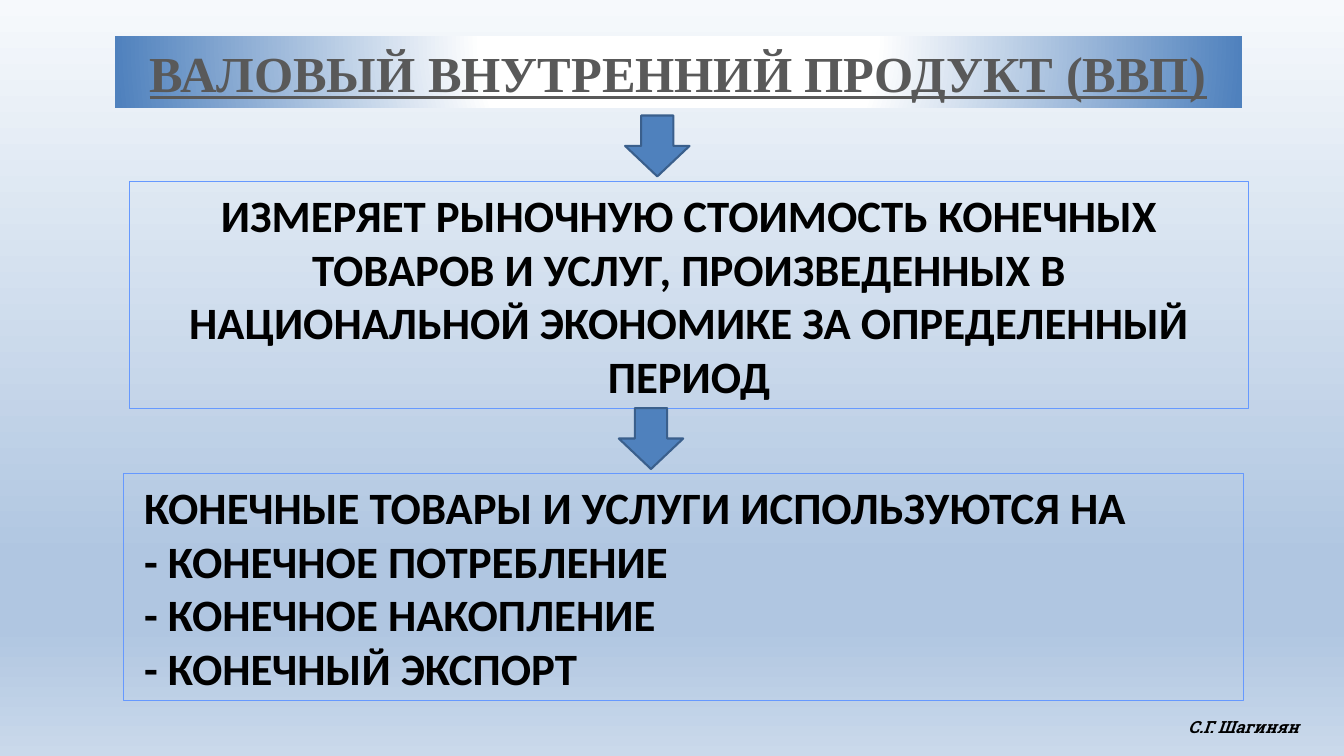
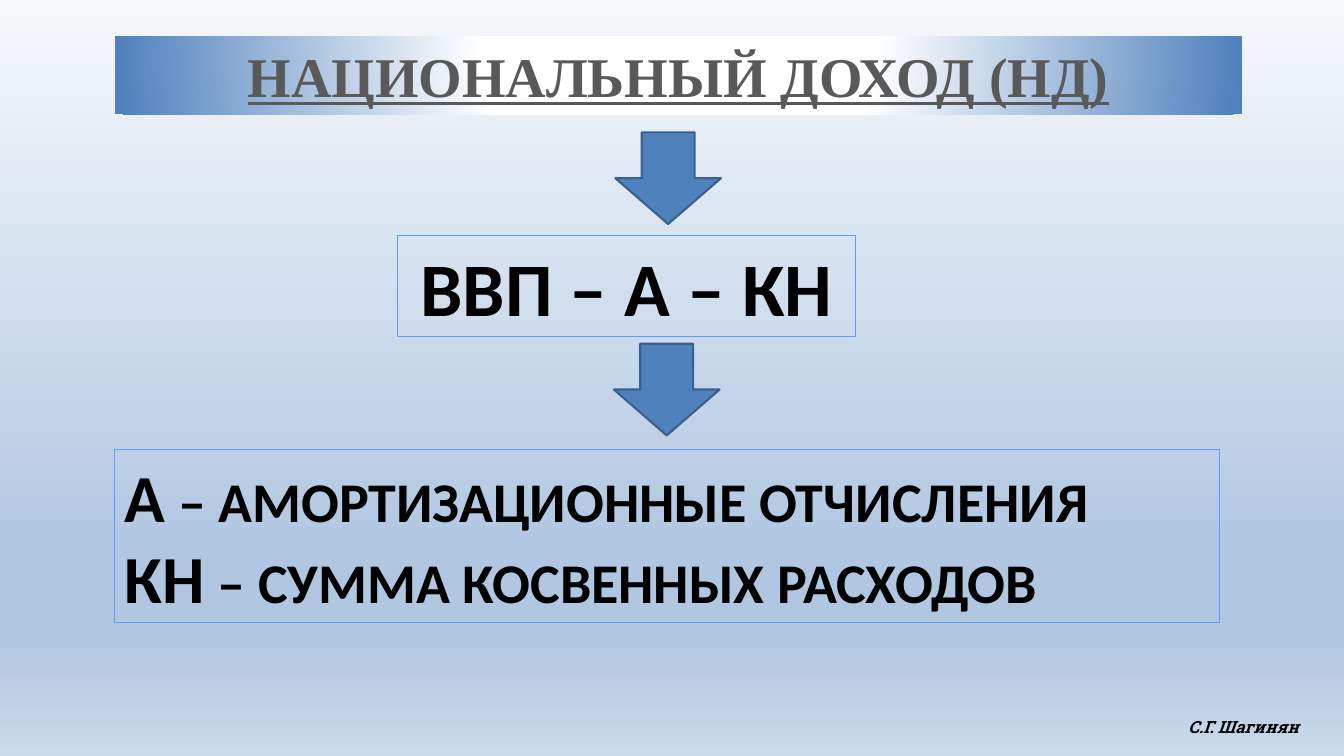
from lxml import etree
from pptx import Presentation
from pptx.dml.color import RGBColor
from pptx.enum import shapes, text
from pptx.oxml import ns
from pptx.util import Pt

BLUE, ARROW_EDGE, BOX_EDGE = "4F81BD", "3A5F8C", "6699FF"
BLACK, GREY = "000000", "595959"
BACKGROUND_STOPS = [(0, "F6F9FC"), (74, "B0C6E1"), (83, "B0C6E1"), (100, "CAD9EB")]
BACKGROUND_DIRECTION = '<a:lin ang="5400000" scaled="0"/>'
TITLE_STOPS = [(0, "FFFFFF"), (35, "FFFFFF"), (100, BLUE)]
TITLE_DIRECTION = ('<a:path path="circle"><a:fillToRect l="50000" t="-80000" '
                   'r="50000" b="180000"/></a:path>')
TITLE_LEFT, TITLE_TOP, TITLE_WIDTH = 82, 26, 805
LEFT, CENTER = text.PP_ALIGN.LEFT, text.PP_ALIGN.CENTER

# Arrows: left, top. Boxes: place, left margin, alignment, paragraphs of (words, size).
SLIDES = [
    {
        "title": ("ВАЛОВЫЙ ВНУТРЕННИЙ ПРОДУКТ (ВВП)", 36),
        "title_height": 51,
        "arrow_size": (46, 43.5),
        "arrows": [(446.5, 82.5), (442, 291.5)],
        "boxes": [
            ((92.5, 129.5, 799.5, 162.5), 7.2, CENTER, [
                [("ИЗМЕРЯЕТ РЫНОЧНУЮ СТОИМОСТЬ КОНЕЧНЫХ ТОВАРОВ И УСЛУГ, "
                  "ПРОИЗВЕДЕННЫХ В НАЦИОНАЛЬНОЙ ЭКОНОМИКЕ ЗА ОПРЕДЕЛЕННЫЙ ПЕРИОД", 32)],
            ]),
            ((88.5, 338, 799.5, 162.5), 14.4, LEFT, [
                [("КОНЕЧНЫЕ ТОВАРЫ И УСЛУГИ ИСПОЛЬЗУЮТСЯ НА", 32)],
                [("- КОНЕЧНОЕ ПОТРЕБЛЕНИЕ", 32)],
                [("- КОНЕЧНОЕ НАКОПЛЕНИЕ", 32)],
                [("- КОНЕЧНЫЙ ЭКСПОРТ", 32)],
            ]),
        ],
    },
    {
        "title": ("НАЦИОНАЛЬНЫЙ ДОХОД (НД)", 40),
        "title_height": 55.5,
        "arrow_size": (75.5, 65.5),
        "arrows": [(439.5, 94.5), (438.5, 245.5)],
        "boxes": [
            ((284, 168, 327, 72.5), 7.2, CENTER, [[("ВВП – А – КН", 54)]]),
            ((82, 321, 789, 124), 7.2, LEFT, [
                [("А", 48), (" – АМОРТИЗАЦИОННЫЕ ОТЧИСЛЕНИЯ", 40)],
                [("КН", 48), (" – СУММА КОСВЕННЫХ РАСХОДОВ", 40)],
            ]),
        ],
    },
]


def set_gradient(owner, fill, stops, direction):
    """Give fill, which belongs to the slide or shape owner, any number of stops."""
    fill.gradient()
    gradient = owner.element.find(".//" + ns.qn("a:gradFill"))
    for child in list(gradient):
        gradient.remove(child)
    stop_xml = "".join(f'<a:gs pos="{position * 1000}"><a:srgbClr val="{colour}"/></a:gs>'
                       for position, colour in stops)
    parts = etree.fromstring(f'<a:parts {ns.nsdecls("a")}><a:gsLst>{stop_xml}</a:gsLst>'
                             f'{direction}</a:parts>')
    gradient.extend(list(parts))


def write_text(shape, paragraphs, font_name, colour, alignment, italic=False, underline=False):
    frame = shape.text_frame
    for index, parts in enumerate(paragraphs):
        paragraph = frame.add_paragraph() if index else frame.paragraphs[0]
        paragraph.alignment = alignment
        for words, size in parts:
            run = paragraph.add_run()
            run.text = words
            run.font.name = font_name
            run.font.size = Pt(size)
            run.font.bold = True
            run.font.italic = italic
            run.font.underline = underline
            run.font.color.rgb = RGBColor.from_string(colour)


presentation = Presentation()
presentation.slide_width, presentation.slide_height = Pt(960), Pt(540)

for content in SLIDES:
    slide = presentation.slides.add_slide(presentation.slide_layouts[6])
    set_gradient(slide, slide.background.fill, BACKGROUND_STOPS, BACKGROUND_DIRECTION)

    title = slide.shapes.add_shape(shapes.MSO_SHAPE.RECTANGLE, Pt(TITLE_LEFT), Pt(TITLE_TOP),
                                   Pt(TITLE_WIDTH), Pt(content["title_height"]))
    title.shadow.inherit = False
    title.line.fill.background()
    set_gradient(title, title.fill, TITLE_STOPS, TITLE_DIRECTION)
    write_text(title, [[content["title"]]], "Times New Roman", GREY, CENTER, underline=True)

    for place, margin, alignment, paragraphs in content["boxes"]:
        box = slide.shapes.add_shape(shapes.MSO_SHAPE.RECTANGLE, *map(Pt, place))
        box.shadow.inherit = False
        box.fill.background()
        box.line.color.rgb = RGBColor.from_string(BOX_EDGE)
        box.line.width = Pt(0.75)
        box.text_frame.margin_left = Pt(margin)
        write_text(box, paragraphs, "Calibri", BLACK, alignment)

    for position in content["arrows"]:
        arrow = slide.shapes.add_shape(shapes.MSO_SHAPE.DOWN_ARROW,
                                       *map(Pt, position + content["arrow_size"]))
        arrow.shadow.inherit = False
        arrow.fill.solid()
        arrow.fill.fore_color.rgb = RGBColor.from_string(BLUE)
        arrow.line.color.rgb = RGBColor.from_string(ARROW_EDGE)
        arrow.line.width = Pt(1.5)

    author = slide.shapes.add_textbox(Pt(841.5), Pt(508.5), Pt(104), Pt(21.5))
    author.text_frame.word_wrap = False
    write_text(author, [[("С.Г. Шагинян", 12)]], "Roboto Slab", BLACK, LEFT, italic=True)

presentation.save("out.pptx")
